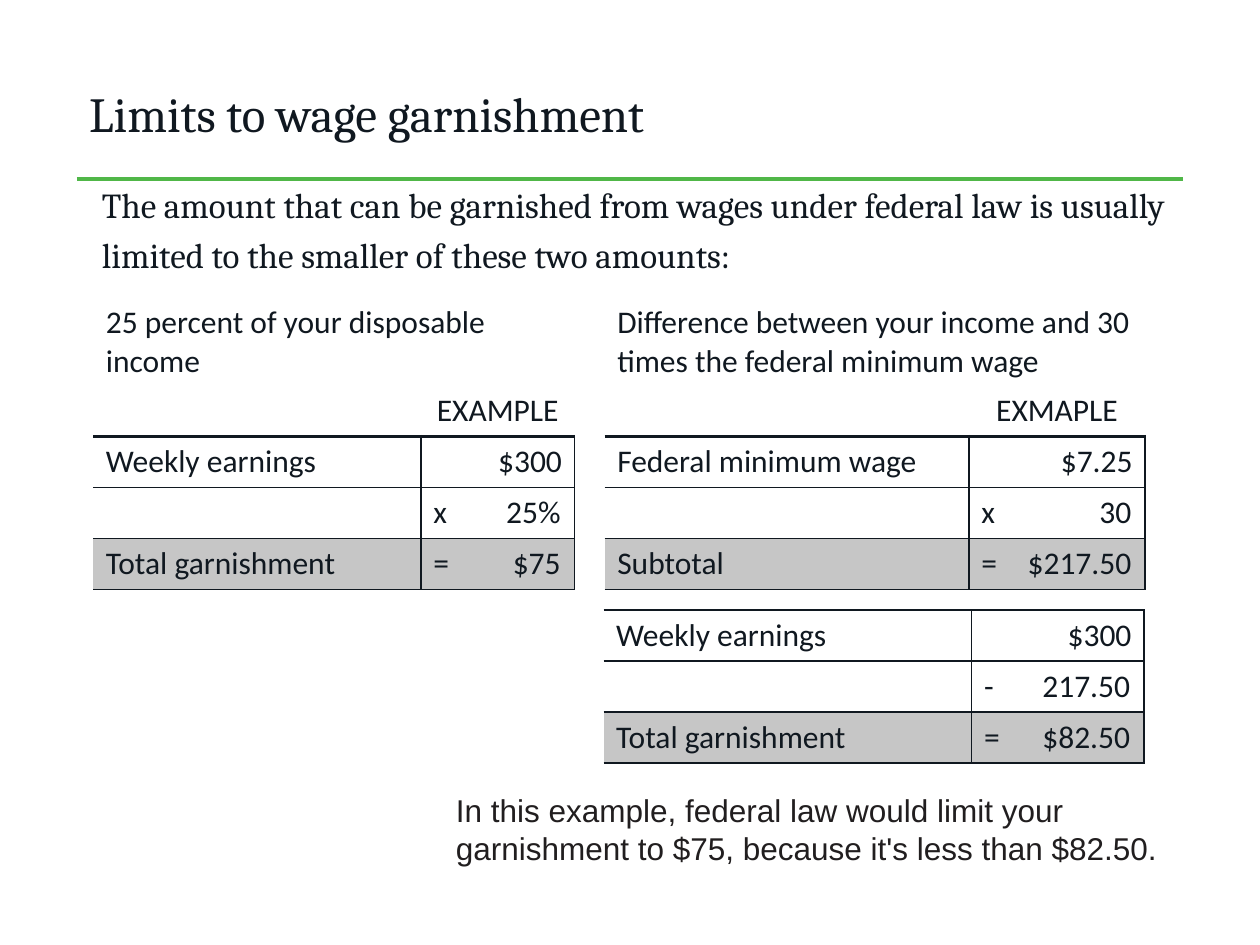
"""Build the wage garnishment slide with its two worked examples."""
import lxml.etree
import pptx
import pptx.dml.color
import pptx.enum.shapes
import pptx.enum.text
import pptx.oxml
import pptx.oxml.ns
import pptx.util

THEME = {
    "serif": "Cambria", "table": "Calibri", "sans": "Arial",
    "title": 28, "body": 20, "small": 18,
    "ink": "101820", "note": "211E1F", "rule": "50B748", "total": "C6C6C6",
    "thin": 1, "thick": 2.25,
    "plain_table": "{2D5ABB26-0587-4C30-8999-92F81FD0307C}",
}
ALIGN = pptx.enum.text.PP_ALIGN
ANCHOR = pptx.enum.text.MSO_ANCHOR
RGB = pptx.dml.color.RGBColor.from_string
qn = pptx.oxml.ns.qn

prs = pptx.Presentation()
prs.slide_width = pptx.util.Inches(10)
prs.slide_height = pptx.util.Inches(7.5)
COL, ROW = prs.slide_width // 100, prs.slide_height // 75
s = prs.slides.add_slide(prs.slide_layouts[6])


def write(tf, text, font="table", size="small", color="ink", align=ALIGN.LEFT,
          spacing=None, indent=0, tab=None):
    """Put one formatted paragraph into a text frame."""
    tf.word_wrap = True
    p = tf.paragraphs[0]
    p.alignment = align
    if spacing:
        p.line_spacing = spacing
    pPr = p._p.get_or_add_pPr()
    if indent:
        pPr.set("marL", str(int(indent)))
        pPr.set("indent", "0")
    if tab:
        tabs = lxml.etree.SubElement(pPr, qn("a:tabLst"))
        lxml.etree.SubElement(tabs, qn("a:tab"), pos=str(int(tab)), algn="r")
    r = p.add_run()
    r.text = text
    r.font.name = THEME[font]
    r.font.size = pptx.util.Pt(THEME[size])
    r.font.color.rgb = RGB(THEME[color])


def draw_edges(cell, **widths):
    """Draw the named cell borders, leaving the others empty."""
    tcPr = cell._tc.get_or_add_tcPr()
    for side in "LRTB":
        width = widths.get(side, 0)
        ln = lxml.etree.SubElement(tcPr, qn("a:ln" + side), w=str(int(pptx.util.Pt(width))))
        if width:
            fill = lxml.etree.SubElement(ln, qn("a:solidFill"))
            lxml.etree.SubElement(fill, qn("a:srgbClr"), val=THEME["ink"])
        else:
            lxml.etree.SubElement(ln, qn("a:noFill"))


rule = s.shapes.add_connector(pptx.enum.shapes.MSO_CONNECTOR.STRAIGHT,
                              int(6.1 * COL), int(14.2 * ROW), int(93.9 * COL), int(14.2 * ROW))
rule.line.color.rgb = RGB(THEME["rule"])
rule.line.width = pptx.util.Pt(2)
lxml.etree.SubElement(rule._element.spPr, qn("a:effectLst"))

texts = [
    ("Limits to wage garnishment", (6.1, 4.9, 87.9, 8.1), ANCHOR.MIDDLE,
     dict(font="serif", size="title")),
    ("The amount that can be garnished from wages under federal law is usually "
     "limited to the smaller of these two amounts:", (6.1, 13.5, 87.9, 9.5), ANCHOR.TOP,
     dict(font="serif", size="body", spacing=1.18, indent=COL)),
    ("In this example, federal law would limit your garnishment to $75, "
     "because it's less than $82.50.", (35.2, 62.3, 58.7, 7.1), ANCHOR.TOP,
     dict(font="sans", color="note")),
]
for text, (x, y, w, h), anchor, look in texts:
    sp = s.shapes.add_textbox(int(x * COL), int(y * ROW), int(w * COL), int(h * ROW))
    sp.text_frame.vertical_anchor = anchor
    write(sp.text_frame, text, **look)

# each table: left, top, column kinds, column widths, heading rows, cells
tables = [
    (7.4, 23.6, "LV-LV", (26, 12.2, 2.3, 28.9, 14), 2, [
        ("25 percent of your disposable income", "", "",
         "Difference between your income and 30 times the federal minimum wage", ""),
        ("", "EXAMPLE", "", "", "EXMAPLE"),
        ("Weekly earnings", "$300", "", "Federal minimum wage", "$7.25"),
        ("", "x\t25%", "", "", "x\t30"),
        ("Total garnishment", "=\t$75", "", "Subtotal", "=\t$217.50"),
    ]),
    (47.9, 48.4, "LV", (29.2, 13.7), 0, [
        ("Weekly earnings", "$300"),
        ("", "-\t217.50"),
        ("Total garnishment", "=\t$82.50"),
    ]),
]
thin, thick = THEME["thin"], THEME["thick"]
for left, top, kinds, widths, heads, rows in tables:
    heights = [7 if heads and i == 0 else 4.05 for i in range(len(rows))]
    sp = s.shapes.add_table(len(rows), len(kinds), int(left * COL), int(top * ROW),
                            int(sum(widths) * COL), int(sum(heights) * ROW))
    table = sp.table
    table.first_row = table.horz_banding = False
    table._tbl.tblPr.find(qn("a:tableStyleId")).text = THEME["plain_table"]
    for column, width in zip(table.columns, widths):
        column.width = int(width * COL)
    for i, row in enumerate(rows):
        table.rows[i].height = int(heights[i] * ROW)
        for j, text in enumerate(row):
            cell = table.cell(i, j)
            value = kinds[j] == "V"
            edges = {}
            if kinds[j] != "-" and i >= heads:
                edges = dict(L=thin if value else 0, R=thin, B=thin,
                             T=thick if heads and i == heads else thin)
            elif kinds[j] != "-" and i == heads - 1:
                edges = dict(B=thick)
            draw_edges(cell, **edges)
            if kinds[j] != "-" and i == len(rows) - 1:
                cell.fill.solid()
                cell.fill.fore_color.rgb = RGB(THEME["total"])
            else:
                cell.fill.background()
            if heads and i == 0 and kinds[j] == "L":
                cell.merge(table.cell(i, j + 1))
            if "\t" in text:
                write(cell.text_frame, text, tab=(widths[j] - 2.1) * COL)
            elif text:
                align = ALIGN.LEFT if not value else ALIGN.CENTER if i < heads else ALIGN.RIGHT
                write(cell.text_frame, text, align=align)

prs.save("out.pptx")
